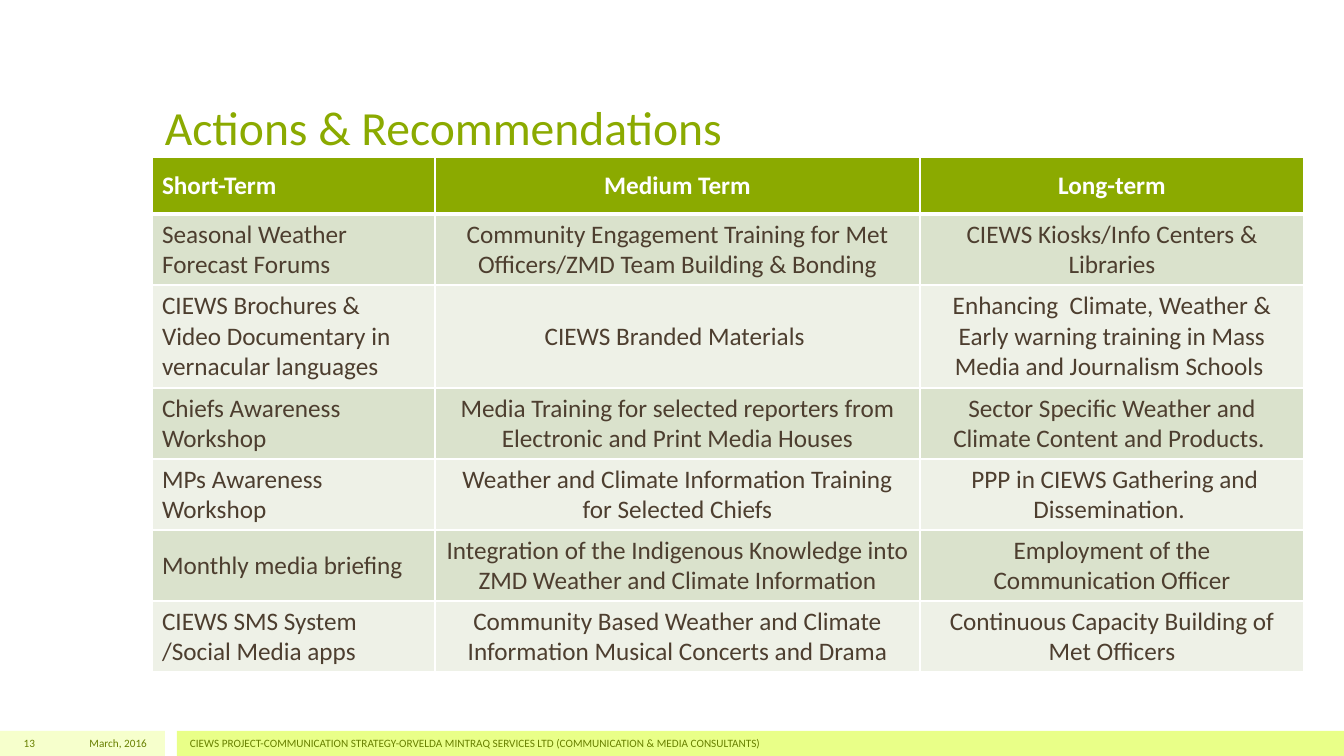
from lxml.etree import SubElement
from pptx import Presentation
from pptx.dml.color import RGBColor
from pptx.enum.shapes import MSO_SHAPE
from pptx.enum.text import MSO_ANCHOR, PP_ALIGN
from pptx.oxml.ns import qn
from pptx.util import Pt

SLIDE_W, SLIDE_H = 1344, 756
SCALE = 12192000 / SLIDE_W
FONT = "Calibri"

GREEN = RGBColor(0x8B, 0xAA, 0x00)
DARK_GREEN = RGBColor(0x68, 0x80, 0x00)
PALE_LIME = RGBColor(0xF6, 0xFF, 0xCC)
LIME = RGBColor(0xE9, 0xFF, 0x88)
BROWN = RGBColor(0x4D, 0x3E, 0x2F)
SAGE = RGBColor(0xDA, 0xE2, 0xCC)
PALE_SAGE = RGBColor(0xEE, 0xF1, 0xE7)
WHITE = RGBColor(0xFF, 0xFF, 0xFF)

COLUMN_WIDTHS = [283, 485, 384]
ROW_HEIGHTS = [57, 71, 103, 71, 71, 71, 71]
ACTIONS = [
    ("Short-Term", "Medium Term", "Long-term"),
    ("Seasonal Weather Forecast Forums",
     "Community Engagement Training for Met Officers/ZMD Team Building & Bonding",
     "CIEWS Kiosks/Info Centers & Libraries"),
    ("CIEWS Brochures &  Video Documentary in vernacular languages",
     "CIEWS Branded Materials ",
     "Enhancing  Climate, Weather & Early warning training in Mass Media and Journalism Schools "),
    ("Chiefs Awareness Workshop",
     "Media Training for selected reporters from Electronic and Print Media Houses",
     "Sector Specific Weather and Climate Content and Products. "),
    ("MPs Awareness Workshop",
     "Weather and Climate Information Training for Selected Chiefs",
     " PPP in CIEWS Gathering and Dissemination. "),
    ("Monthly media briefing",
     "Integration of the Indigenous Knowledge into ZMD Weather and Climate Information",
     "Employment of the Communication Officer"),
    ("CIEWS SMS System /Social Media apps",
     "Community Based Weather and Climate Information Musical Concerts and Drama",
     "Continuous Capacity Building of Met Officers"),
]


def px(length):
    return round(length * SCALE)


def write(frame, text, size, color, align=PP_ALIGN.LEFT, bold=False):
    paragraph = frame.paragraphs[0]
    paragraph.text = text
    paragraph.alignment = align
    font = paragraph.font
    font.name, font.size, font.bold = FONT, Pt(size), bold
    font.color.rgb = color


def add_text(slide, box, text, size, color, align=PP_ALIGN.LEFT, anchor=MSO_ANCHOR.MIDDLE):
    frame = slide.shapes.add_textbox(*map(px, box)).text_frame
    frame.word_wrap = True
    frame.vertical_anchor = anchor
    write(frame, text, size, color, align)


def add_band(slide, box, color):
    band = slide.shapes.add_shape(MSO_SHAPE.RECTANGLE, *map(px, box))
    band.shadow.inherit = False
    band.fill.solid()
    band.fill.fore_color.rgb = color
    band.line.fill.background()


def set_borders(cell, widths):
    properties = cell._tc.get_or_add_tcPr()
    for side, width in widths.items():
        border = SubElement(properties, qn(f"a:ln{side}"), w=str(Pt(width)))
        fill = SubElement(border, qn("a:solidFill"))
        SubElement(fill, qn("a:srgbClr"), val=str(WHITE))


def add_title(slide, box):
    add_text(slide, box, "Actions & Recommendations", 34, GREEN, anchor=MSO_ANCHOR.BOTTOM)


def add_actions_table(slide, left, top):
    box = (left, top, sum(COLUMN_WIDTHS), sum(ROW_HEIGHTS))
    table = slide.shapes.add_table(
        len(ACTIONS), len(COLUMN_WIDTHS), *map(px, box)).table
    for column, width in zip(table.columns, COLUMN_WIDTHS):
        column.width = px(width)
    for row_index, (row, height, texts) in enumerate(zip(table.rows, ROW_HEIGHTS, ACTIONS)):
        row.height = px(height)
        header = row_index == 0
        fill = GREEN if header else SAGE if row_index % 2 else PALE_SAGE
        borders = {"L": 1, "R": 1, "T": 3 if row_index == 1 else 1, "B": 3 if header else 1}
        for column_index, (cell, text) in enumerate(zip(row.cells, texts)):
            set_borders(cell, borders)
            cell.fill.solid()
            cell.fill.fore_color.rgb = fill
            cell.vertical_anchor = MSO_ANCHOR.MIDDLE
            write(cell.text_frame, text, 18, WHITE if header else BROWN,
                  PP_ALIGN.CENTER if column_index else PP_ALIGN.LEFT, header)


def add_footer(slide, top, height):
    add_band(slide, (0, top, 165, height), PALE_LIME)
    add_band(slide, (177, top, SLIDE_W - 177, height), LIME)
    for left, width, text, align in [
        (47, 110, "March, 2016", PP_ALIGN.RIGHT),
        (180, 1008, "CIEWS PROJECT-COMMUNICATION STRATEGY-ORVELDA MINTRAQ SERVICES LTD "
                    "(COMMUNICATION & MEDIA CONSULTANTS)", PP_ALIGN.LEFT),
        (0, 45, "13", PP_ALIGN.RIGHT),
    ]:
        add_text(slide, (left, top, width, height), text, 8, DARK_GREEN, align)


def main():
    deck = Presentation()
    deck.slide_width, deck.slide_height = px(SLIDE_W), px(SLIDE_H)
    slide = deck.slides.add_slide(deck.slide_layouts[6])
    add_footer(slide, 731, 25)
    add_title(slide, (155, 30, 1033, 130))
    add_actions_table(slide, 152, 157)
    deck.save("out.pptx")


if __name__ == "__main__":
    main()
